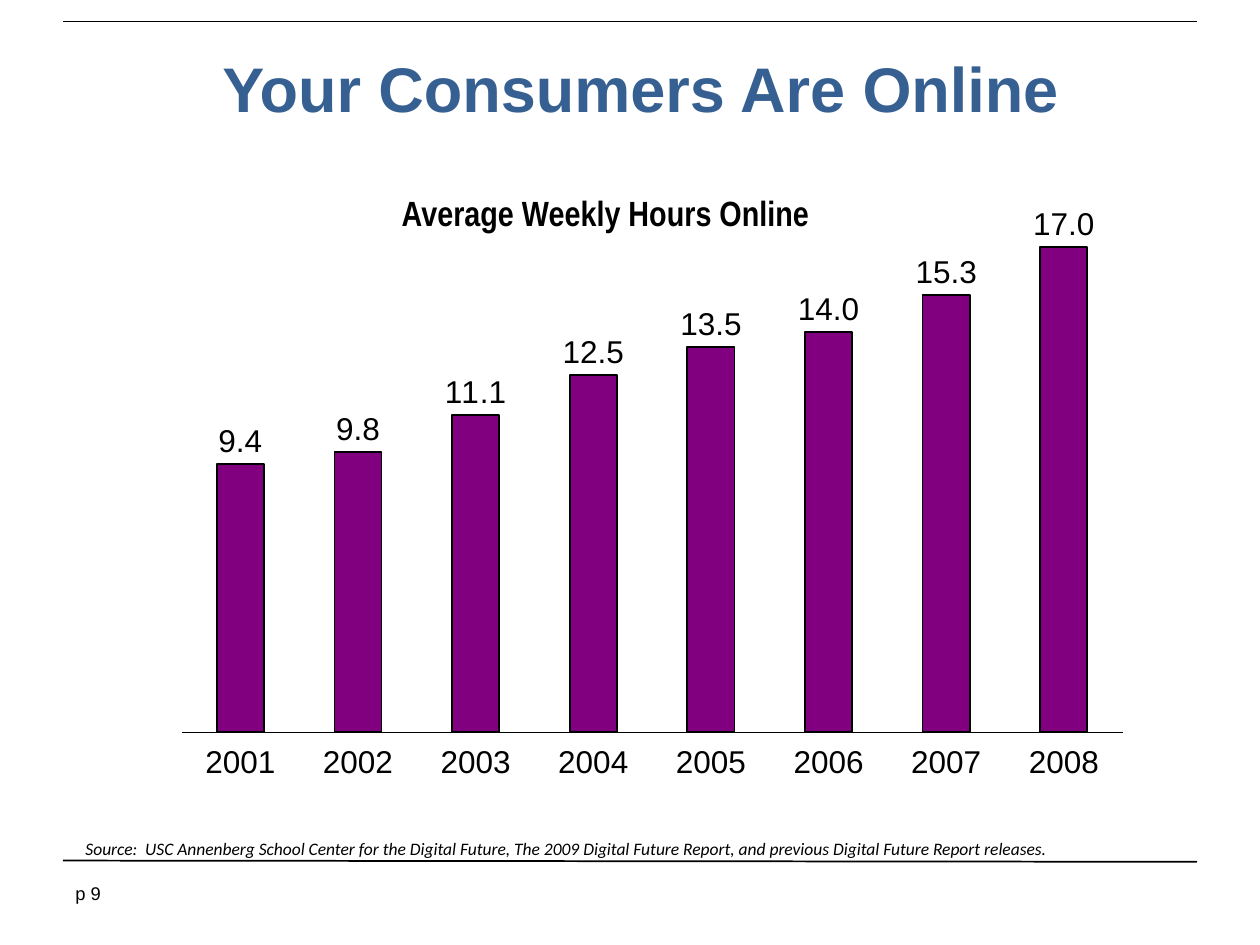
from dataclasses import dataclass

from lxml.etree import SubElement
from pptx import Presentation
from pptx.chart.chart import Chart
from pptx.chart.data import CategoryChartData
from pptx.dml.color import RGBColor
from pptx.enum.chart import XL_CHART_TYPE, XL_LABEL_POSITION, XL_TICK_LABEL_POSITION, XL_TICK_MARK
from pptx.enum.shapes import MSO_CONNECTOR
from pptx.enum.text import MSO_ANCHOR, MSO_AUTO_SIZE, PP_ALIGN
from pptx.oxml.ns import qn
from pptx.slide import Slide
from pptx.util import Pt


@dataclass(frozen=True)
class Theme:
    black: RGBColor = RGBColor(0, 0, 0)
    title_blue: RGBColor = RGBColor(0x37, 0x60, 0x92)
    bar_purple: RGBColor = RGBColor(0x80, 0, 0x80)
    font: str = "Arial"
    narrow_font: str = "Arial Narrow"
    source_font: str = "Calibri"
    title_size: float = 36
    heading_size: float = 20
    chart_size: float = 18
    page_size: float = 10.5
    source_size: float = 10


@dataclass(frozen=True)
class Box:
    left: float
    top: float
    width: float
    height: float

    def lengths(self) -> tuple:
        return Pt(self.left), Pt(self.top), Pt(self.width), Pt(self.height)


@dataclass(frozen=True)
class Rule:
    start_y: float
    end_y: float


THEME = Theme()
RULES = (Rule(491.76, 492.48), Rule(12.24, 12.24))
RULE_LEFT, RULE_RIGHT = 36, 684
TITLE_BOX = Box(48.24, 30.24, 635.76, 61.2)
HEADING_BOX = Box(236.52, 108.36, 218.88, 33.84)
SOURCE_BOX = Box(41.76, 476.64, 570.24, 18)
CHART_BOX = Box(41.76, 98.64, 607.68, 378)
PAGE_BOX = Box(36, 500.4, 167.76, 28.8)
PLOT = {"x": 0.102, "y": 0.069, "w": 0.885, "h": 0.777}
YEARS = [str(year) for year in range(2001, 2009)]
HOURS = (9.4, 9.8, 11.1, 12.5, 13.5, 14, 15.3, 17)


def style_font(font, size: float, color: RGBColor = THEME.black, name: str = THEME.font,
               bold: bool = False, italic: bool = False) -> None:
    font.name, font.size, font.bold, font.italic = name, Pt(size), bold, italic
    font.color.rgb = color


def write_text(slide: Slide, text: str, box: Box, *, size: float, shape=None,
               align=PP_ALIGN.LEFT, anchor=MSO_ANCHOR.TOP, spacing: float = 1.0,
               inset: float | None = None, wrap: bool = True, **font_format) -> None:
    if shape is None:
        shape = slide.shapes.add_textbox(*box.lengths())
    else:
        shape.left, shape.top, shape.width, shape.height = box.lengths()
    frame = shape.text_frame
    frame.word_wrap = wrap
    frame.auto_size = MSO_AUTO_SIZE.NONE
    frame.vertical_anchor = anchor
    if inset is not None:
        frame.margin_left = frame.margin_right = Pt(inset)
        frame.margin_top = frame.margin_bottom = Pt(inset)
    paragraph = frame.paragraphs[0]
    paragraph.alignment = align
    paragraph.line_spacing = spacing
    run = paragraph.add_run()
    run.text = text
    style_font(run.font, size, **font_format)


def draw_rule(slide: Slide, rule: Rule) -> None:
    connector = slide.shapes.add_connector(
        MSO_CONNECTOR.STRAIGHT, Pt(RULE_LEFT), Pt(rule.start_y), Pt(RULE_RIGHT), Pt(rule.end_y))
    connector.line.color.rgb = THEME.black
    connector.line.width = Pt(1)
    SubElement(connector._element.spPr, qn("a:effectLst"))


def place_plot(chart: Chart) -> None:
    plot_area = chart._chartSpace.chart.plotArea
    for old_layout in plot_area.findall(qn("c:layout")):
        plot_area.remove(old_layout)
    layout = SubElement(plot_area, qn("c:layout"))
    plot_area.insert(0, layout)
    manual = SubElement(layout, qn("c:manualLayout"))
    settings = {"layoutTarget": "inner", "xMode": "edge", "yMode": "edge", **PLOT}
    for tag, value in settings.items():
        SubElement(manual, qn(f"c:{tag}")).set("val", str(value))


def draw_hours_chart(slide: Slide) -> None:
    data = CategoryChartData(number_format="#,##0.0")
    data.categories = YEARS
    data.add_series("Series 1", HOURS)
    chart = slide.shapes.add_chart(
        XL_CHART_TYPE.COLUMN_CLUSTERED, *CHART_BOX.lengths(), data).chart
    chart.has_title = False
    chart.has_legend = False
    style_font(chart.font, THEME.chart_size)
    place_plot(chart)

    value_axis = chart.value_axis
    value_axis.minimum_scale, value_axis.maximum_scale = 0, 18
    value_axis.has_major_gridlines = False
    value_axis.visible = False

    year_axis = chart.category_axis
    year_axis.major_tick_mark = XL_TICK_MARK.NONE
    year_axis.tick_label_position = XL_TICK_LABEL_POSITION.LOW
    year_axis.format.line.color.rgb = THEME.black
    year_axis.format.line.width = Pt(0.25)
    style_font(year_axis.tick_labels.font, THEME.chart_size)

    plot = chart.plots[0]
    plot.gap_width = 150
    plot.vary_by_categories = False
    series = plot.series[0]
    series.format.fill.solid()
    series.format.fill.fore_color.rgb = THEME.bar_purple
    series.format.line.color.rgb = THEME.black
    series.format.line.width = Pt(1)
    labels = series.data_labels
    labels.show_value = True
    labels.number_format = "#,##0.0"
    labels.number_format_is_linked = False
    labels.position = XL_LABEL_POSITION.OUTSIDE_END
    style_font(labels.font, THEME.chart_size)


def main() -> None:
    presentation = Presentation()
    presentation.slide_width, presentation.slide_height = Pt(720), Pt(540)
    slide = presentation.slides.add_slide(presentation.slide_layouts[5])
    for rule in RULES:
        draw_rule(slide, rule)
    write_text(slide, "Your Consumers Are Online", TITLE_BOX, shape=slide.shapes.title,
               size=THEME.title_size, color=THEME.title_blue, bold=True,
               align=PP_ALIGN.CENTER, spacing=0.9, inset=2.88)
    draw_hours_chart(slide)
    write_text(slide, "Average Weekly Hours Online", HEADING_BOX, size=THEME.heading_size,
               name=THEME.narrow_font, bold=True, align=PP_ALIGN.CENTER, spacing=0.9, wrap=False)
    write_text(slide, "Source:  USC Annenberg School Center for the Digital Future, "
               "The 2009 Digital Future Report, and previous Digital Future Report releases.",
               SOURCE_BOX, size=THEME.source_size, name=THEME.source_font, italic=True,
               anchor=MSO_ANCHOR.BOTTOM, spacing=0.9)
    write_text(slide, "p 9", PAGE_BOX, size=THEME.page_size)
    presentation.save("out.pptx")


if __name__ == "__main__":
    main()
